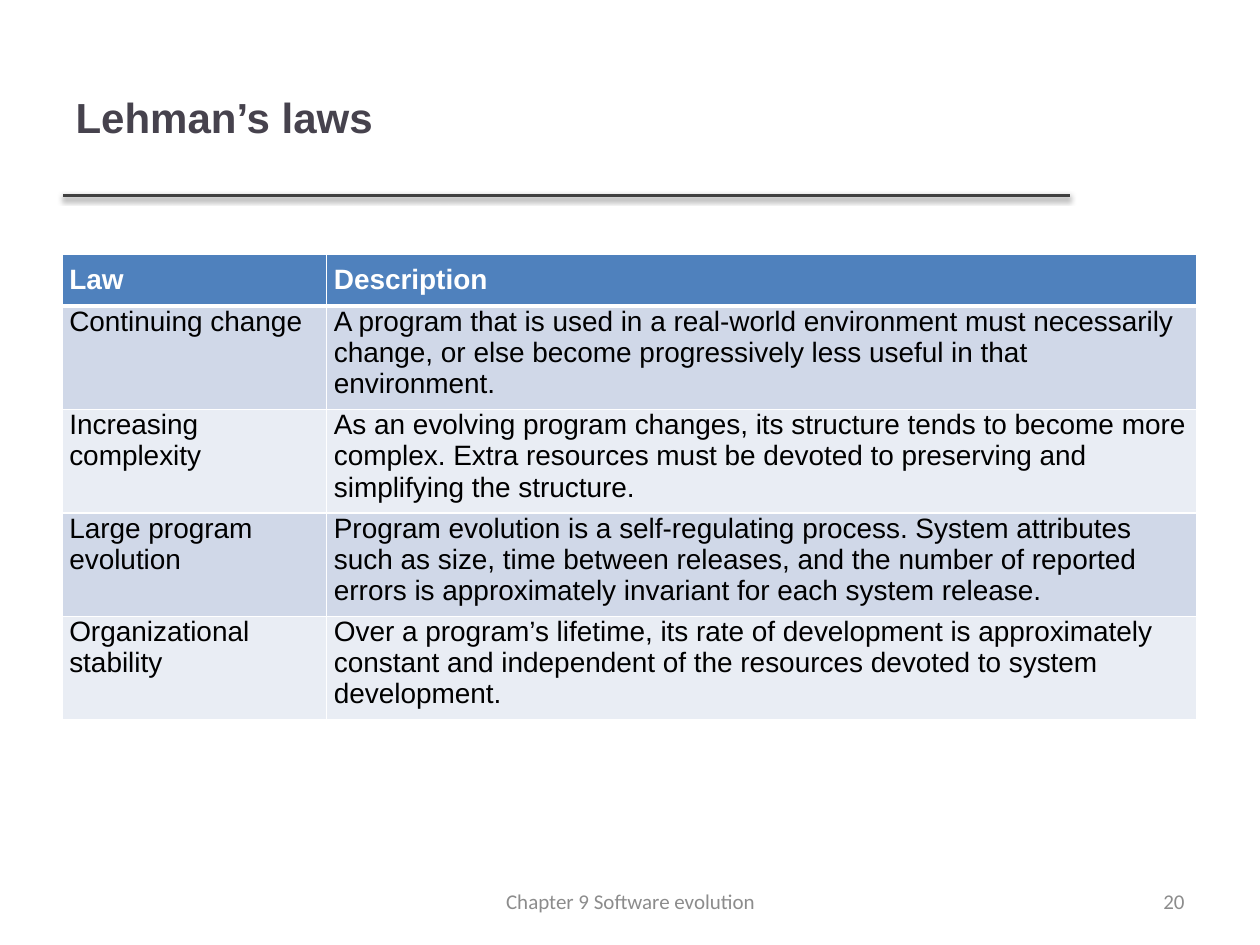
"""Build the Lehman's laws slide: ruled title, two-column table and footer."""
from lxml import etree
from pptx import Presentation
from pptx import util as u
from pptx.dml.color import RGBColor
from pptx.enum import shapes, text
from pptx.oxml import parse_xml
from pptx.oxml.ns import nsdecls, qn

COLORS = {
    "title": "46424D", "rule": "404040", "header": "4F81BD", "odd": "D0D8E8",
    "even": "E9EDF4", "white": "FFFFFF", "black": "000000", "footer": "8C8C8C",
}
LAWS = [
    ("Law", "Description"),
    ("Continuing change",
     "A program that is used in a real-world environment must necessarily change, "
     "or else become progressively less useful in that environment."),
    ("Increasing complexity",
     "As an evolving program changes, its structure tends to become more complex. "
     "Extra resources must be devoted to preserving and simplifying the structure."),
    ("Large program evolution",
     "Program evolution is a self-regulating process. System attributes such as size, "
     "time between releases, and the number of reported errors is approximately "
     "invariant for each system release."),
    ("Organizational stability",
     "Over a program’s lifetime, its rate of development is approximately constant "
     "and independent of the resources devoted to system development."),
]
FOOTERS = [
    ("20", 7.17, 2.33, text.PP_ALIGN.RIGHT),
    ("Chapter 9 Software evolution", 3.42, 3.17, text.PP_ALIGN.CENTER),
]


def set_font(para, name, size, color, bold=False):
    para.font.name = name
    para.font.size = u.Pt(size)
    para.font.bold = bold
    para.font.color.rgb = RGBColor.from_string(COLORS[color])


def add_border(cell, side, points):
    props = cell._tc.get_or_add_tcPr()
    border = etree.SubElement(props, qn(f"a:ln{side}"), w=str(u.Pt(points)))
    fill = etree.SubElement(border, qn("a:solidFill"))
    etree.SubElement(fill, qn("a:srgbClr"), val=COLORS["white"])


deck = Presentation()
deck.slide_width, deck.slide_height = u.Inches(10), u.Inches(7.5)
page = deck.slides.add_slide(deck.slide_layouts[5])

rule = page.shapes.add_connector(
    shapes.MSO_CONNECTOR.STRAIGHT,
    u.Inches(0.5), u.Inches(1.55), u.Inches(8.49), u.Inches(1.55))
rule.line.width = u.Pt(2)
rule.line.color.rgb = RGBColor.from_string(COLORS["rule"])
rule._element.spPr.append(parse_xml(
    f'<a:effectLst {nsdecls("a")}>'
    f'<a:outerShdw blurRad="{u.Pt(3.1)}" dist="{u.Pt(1.6)}" dir="5400000" rotWithShape="0">'
    f'<a:srgbClr val="{COLORS["black"]}"><a:alpha val="38000"/></a:srgbClr>'
    '</a:outerShdw></a:effectLst>'))

title = page.shapes.title
title.left, title.top = u.Inches(0.5), u.Inches(0.3)
title.width, title.height = u.Inches(7.98), u.Inches(1.25)
title.text_frame.text = "Lehman’s laws"
title.text_frame.vertical_anchor = text.MSO_ANCHOR.MIDDLE
heading = title.text_frame.paragraphs[0]
heading.alignment = text.PP_ALIGN.LEFT
set_font(heading, "Arial", 24, "title", True)

table = page.shapes.add_table(
    len(LAWS), 2, u.Inches(0.49), u.Inches(2.02), u.Inches(9.01), u.Inches(3.69)).table
table.columns[0].width, table.columns[1].width = u.Inches(2.1), u.Inches(6.91)
for row, law in enumerate(LAWS):
    is_header = row == 0
    table.rows[row].height = u.Inches(0.41 if is_header else 0.82)
    band = "header" if is_header else "odd" if row % 2 else "even"
    for column, wording in enumerate(law):
        cell = table.cell(row, column)
        cell.text = wording
        cell.margin_left = cell.margin_right = u.Inches(0.06)
        cell.margin_top = u.Inches(0.08 if is_header else 0)
        cell.margin_bottom = u.Inches(0.08)
        for side in "LRTB":
            under_header = (row, side) in [(0, "B"), (1, "T")]
            add_border(cell, side, 3 if under_header else 1)
        cell.fill.solid()
        cell.fill.fore_color.rgb = RGBColor.from_string(COLORS[band])
        para = cell.text_frame.paragraphs[0]
        para.space_after = u.Pt(6)
        set_font(para, "Arial", 16, "white" if is_header else "black", is_header)

for wording, left, width, alignment in FOOTERS:
    box = page.shapes.add_textbox(
        u.Inches(left), u.Inches(6.95), u.Inches(width), u.Inches(0.4))
    box.text_frame.word_wrap = True
    box.text_frame.vertical_anchor = text.MSO_ANCHOR.MIDDLE
    box.text_frame.text = wording
    para = box.text_frame.paragraphs[0]
    para.alignment = alignment
    set_font(para, "Calibri", 12, "footer")

deck.save("out.pptx")
